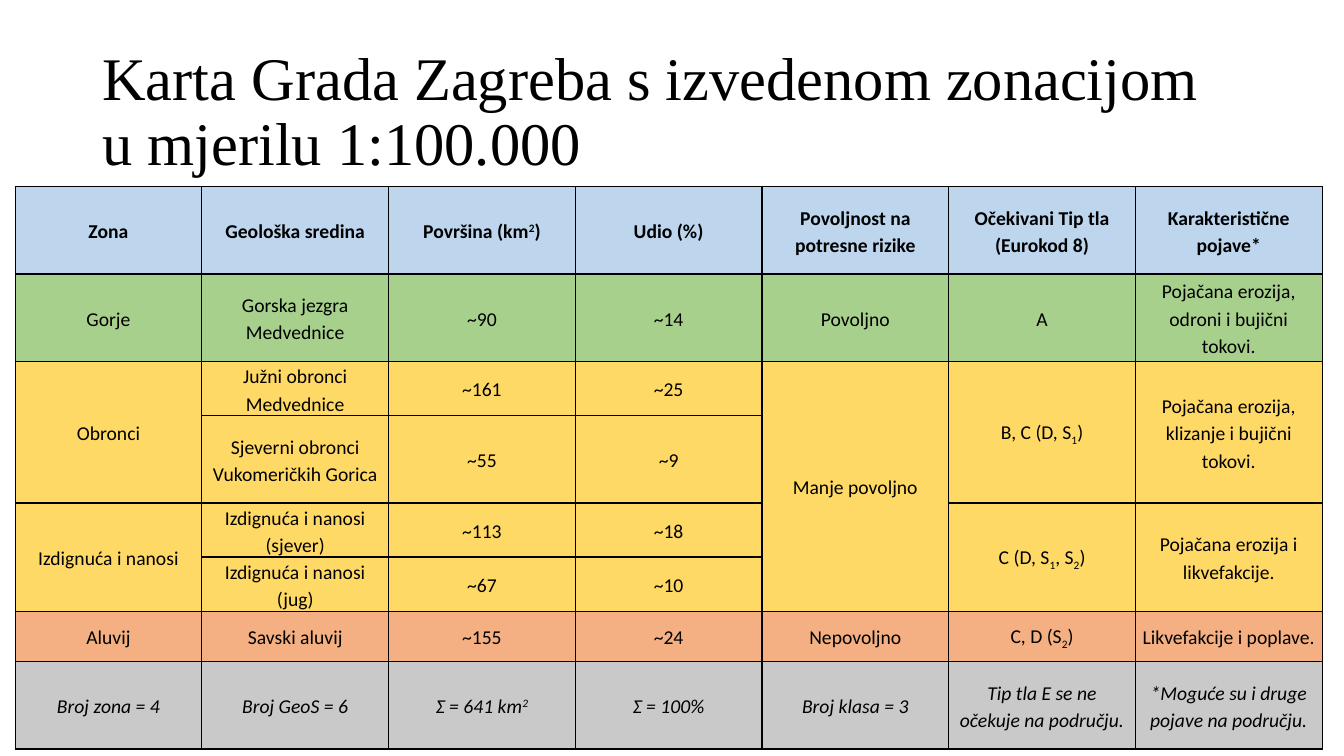
from lxml import etree
from pptx import Presentation
from pptx import util as u
from pptx.dml import color
from pptx.enum import text
from pptx.oxml import ns

INK = {"black": "000000", "blue": "BDD6EE", "green": "A8D08D",
       "gold": "FFD966", "salmon": "F4B083", "gray": "C9C9C9"}
SHIFT = {"^": "30000", "_": "-25000"}


class Deck:
    """Hold the style and the current slide, and draw its elements."""

    def __init__(self, wide, high):
        self.prs = Presentation()
        self.prs.slide_width, self.prs.slide_height = u.Pt(wide), u.Pt(high)
        self.slide = self.prs.slides.add_slide(self.prs.slide_layouts[6])

    def label(self, para, words, font, size, bold=False, slant=False):
        for part in words.split("|"):
            run = para.add_run()
            run.text = part.lstrip("^_")
            run.font.name, run.font.size = font, u.Pt(size)
            run.font.bold, run.font.italic = bold, slant
            run.font.color.rgb = color.RGBColor.from_string(INK["black"])
            if part[0] in SHIFT:
                run.font._element.set("baseline", SHIFT[part[0]])

    def title(self, words, left, top, wide, high):
        box = self.slide.shapes.add_textbox(*map(u.Pt, (left, top, wide, high)))
        frame = box.text_frame
        frame.word_wrap = True
        frame.vertical_anchor = text.MSO_ANCHOR.MIDDLE
        para = frame.paragraphs[0]
        para.line_spacing = 0.9
        self.label(para, words, "Times New Roman", 43.2)

    def border(self, cell):
        props = cell._tc.get_or_add_tcPr()
        for spot, side in enumerate(("lnL", "lnR", "lnT", "lnB")):
            line = etree.Element(ns.qn("a:" + side), w=str(u.Pt(1)))
            fill = etree.SubElement(line, ns.qn("a:solidFill"))
            etree.SubElement(fill, ns.qn("a:srgbClr"), val=INK["black"])
            props.insert(spot, line)

    def cell(self, cell, words, tint, bold, slant):
        cell.fill.solid()
        cell.fill.fore_color.rgb = color.RGBColor.from_string(INK[tint])
        cell.margin_left = cell.margin_right = u.Pt(5)
        cell.margin_top = cell.margin_bottom = 0
        cell.vertical_anchor = text.MSO_ANCHOR.MIDDLE
        self.border(cell)
        para = cell.text_frame.paragraphs[0]
        para.alignment = text.PP_ALIGN.CENTER
        para.line_spacing, para.space_after = 1.15, u.Pt(8)
        if words:
            self.label(para, words, "Calibri", 14, bold, slant)

    def table(self, rows, highs, left, top, wide):
        last, count = len(rows) - 1, len(rows[0]) - 1
        area = map(u.Pt, (left, top, wide, sum(highs)))
        grid = self.slide.shapes.add_table(len(rows), count, *area).table
        for row, high in zip(grid.rows, highs):
            row.height = u.Pt(high)
        for col in grid.columns:
            col.width = u.Pt(wide / count)
        for r, (tint, *items) in enumerate(rows):
            for c, words in enumerate(items):
                self.cell(grid.cell(r, c), words, tint, r == 0, r == last)
        for c in range(count):
            start = 0
            for r in range(1, len(rows) + 1):
                if r > last or rows[r][c + 1]:
                    if r - start > 1:
                        grid.cell(start, c).merge(grid.cell(r - 1, c))
                    start = r

    def save(self):
        self.prs.save("out.pptx")


ROWS = [
    ("blue", "Zona", "Geološka sredina", "Površina (km|^2|)", "Udio (%)",
     "Povoljnost na potresne rizike", "Očekivani Tip tla (Eurokod 8)",
     "Karakteristične pojave*"),
    ("green", "Gorje", "Gorska jezgra Medvednice", "~90", "~14", "Povoljno", "A",
     "Pojačana erozija, odroni i bujični tokovi."),
    ("gold", "Obronci", "Južni obronci Medvednice", "~161", "~25",
     "Manje povoljno", "B, C (D, S|_1|)",
     "Pojačana erozija, klizanje i bujični tokovi."),
    ("gold", None, "Sjeverni obronci Vukomeričkih Gorica", "~55", "~9",
     None, None, None),
    ("gold", "Izdignuća i nanosi", "Izdignuća i nanosi (sjever)", "~113", "~18",
     None, "C (D, S|_1|, S|_2|)", "Pojačana erozija i likvefakcije."),
    ("gold", None, "Izdignuća i nanosi (jug)", "~67", "~10", None, None, None),
    ("salmon", "Aluvij", "Savski aluvij", "~155", "~24", "Nepovoljno",
     "C, D (S|_2|)", "Likvefakcije i poplave."),
    ("gray", "Broj zona = 4", "Broj GeoS = 6", "Σ = 641 km|^2", "Σ = 100%",
     "Broj klasa = 3", "Tip tla E se ne očekuje na području.",
     "*Moguće su i druge pojave na području."),
]
TALL, LOW = 62.5, 36


def main():
    deck = Deck(960, 540)
    deck.title("Karta Grada Zagreba s izvedenom zonacijom u mjerilu 1:100.000",
               66, 28.8, 828, 104.4)
    deck.table(ROWS, (TALL, TALL, LOW, TALL, LOW, LOW, LOW, TALL), 10.8, 133.2, 933.6)
    deck.save()


if __name__ == "__main__":
    main()
